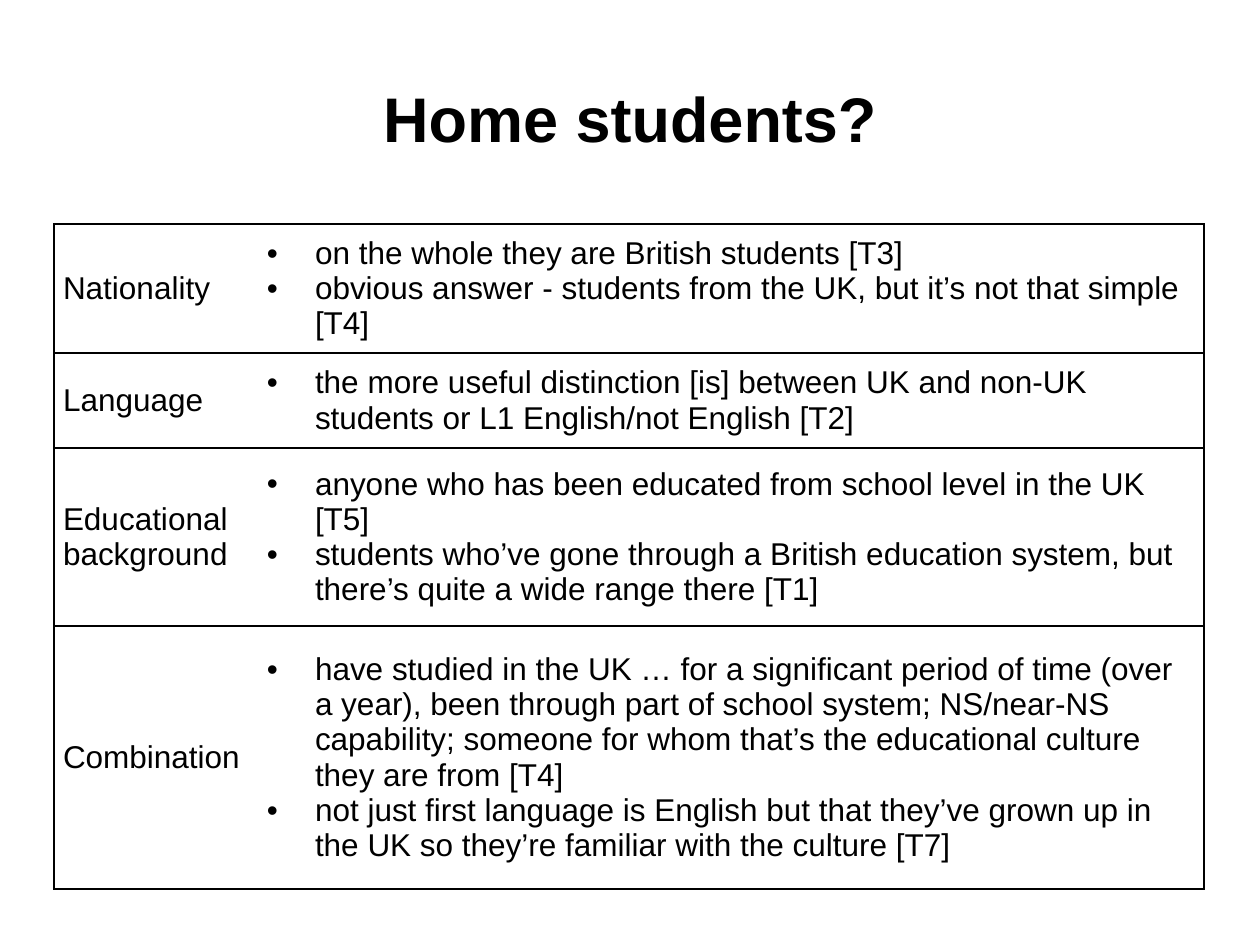
from lxml.etree import SubElement
from pptx import Presentation
from pptx.dml.color import RGBColor
from pptx.enum.text import MSO_ANCHOR, PP_ALIGN
from pptx.oxml.ns import qn
from pptx.util import Pt

PX = 914400 / 126
COLORS = {"ink": "000000", "paper": "FFFFFF"}
INK = RGBColor.from_string(COLORS["ink"])
PAPER = RGBColor.from_string(COLORS["paper"])


def px(n):
    return round(n * PX)


def add_border(cell, side, visible):
    tcPr = cell._tc.get_or_add_tcPr()
    ln = SubElement(tcPr, qn(f"a:ln{side}"), w=str(Pt(1)))
    if visible:
        fill = SubElement(ln, qn("a:solidFill"))
        SubElement(fill, qn("a:srgbClr"), val=COLORS["ink"])
    else:
        SubElement(ln, qn("a:noFill"))


rows = [
    (129, "Nationality", [
        "on the whole they are British students [T3]",
        "obvious answer - students from the UK, but it’s not that simple [T4]",
    ]),
    (95, "Language", [
        "the more useful distinction [is] between UK and non-UK students "
        "or L1 English/not English [T2]",
    ]),
    (178, "Educational background", [
        "anyone who has been educated from school level in the UK [T5]",
        "students who’ve gone through a British education system, but "
        "there’s quite a wide range there [T1]",
    ]),
    (263, "Combination", [
        "have studied in the UK … for a significant period of time (over a year), "
        "been through part of school system; NS/near-NS capability; someone for "
        "whom that’s the educational culture they are from [T4]",
        "not just first language is English but that they’ve grown up in the UK "
        "so they’re familiar with the culture [T7]",
    ]),
]
col_widths = [204, 946]

prs = Presentation()
prs.slide_width, prs.slide_height = px(1260), px(945)
s = prs.slides.add_slide(prs.slide_layouts[5])
s.background.fill.solid()
s.background.fill.fore_color.rgb = PAPER

# Title
title = s.shapes.title
title.left, title.top, title.width, title.height = px(63), px(38), px(1134), px(158)
title.fill.solid()
title.fill.fore_color.rgb = PAPER
tf = title.text_frame
tf.text = "Home students?"
tf.vertical_anchor = MSO_ANCHOR.MIDDLE
p = tf.paragraphs[0]
p.alignment = PP_ALIGN.CENTER
font = p.runs[0].font
font.name, font.size, font.bold = "Arial", Pt(36), True
font.color.rgb = INK

# Table of themes and quotes
height = sum(row[0] for row in rows)
table = s.shapes.add_table(len(rows), 2, px(54), px(224),
                           px(sum(col_widths)), px(height)).table
table.first_row = table.horz_banding = False
for column, width in zip(table.columns, col_widths):
    column.width = px(width)

for i, (row_height, theme, quotes) in enumerate(rows):
    table.rows[i].height = px(row_height)
    for j, lines in enumerate([[theme], quotes]):
        cell = table.cell(i, j)
        cell.vertical_anchor = MSO_ANCHOR.MIDDLE
        cell.margin_left = cell.margin_right = px(9)
        cell.margin_top = cell.margin_bottom = 0
        for side, visible in [("L", j == 0), ("R", j == 1), ("T", True), ("B", True)]:
            add_border(cell, side, visible)
        cell.fill.background()

        tf = cell.text_frame
        tf.text = "\n".join(lines)
        for p in tf.paragraphs:
            font = p.runs[0].font
            font.name, font.size = "Arial", Pt(18)
            font.color.rgb = INK
            if j == 1:
                pPr = p._p.get_or_add_pPr()
                pPr.set("marL", str(px(48)))
                pPr.set("indent", str(px(-48)))
                SubElement(pPr, qn("a:buFont"), typeface="Arial")
                SubElement(pPr, qn("a:buChar"), char="•")

prs.save("out.pptx")
